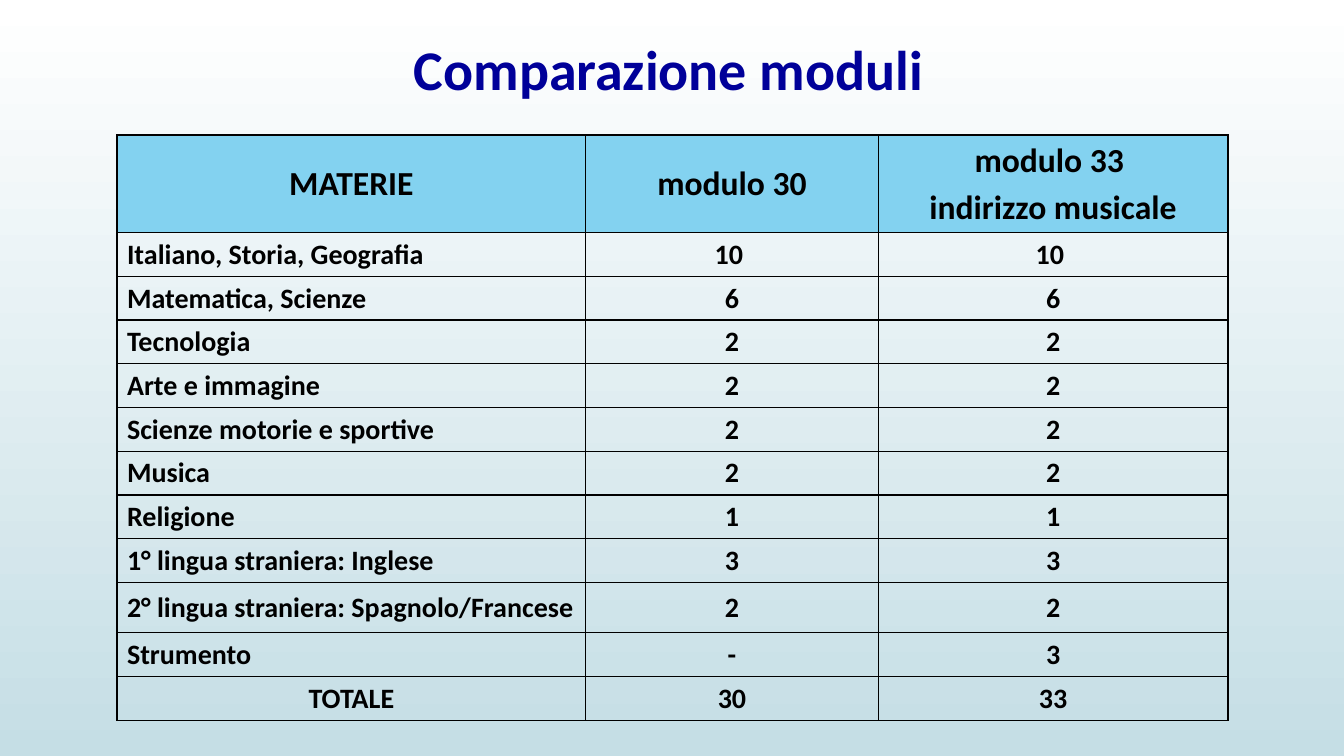
import pptx
import pptx.dml.color
import pptx.enum.text
import pptx.oxml.ns
import pptx.util
from lxml import etree
from pptx.util import Inches

RGBColor = pptx.dml.color.RGBColor
ALIGN = pptx.enum.text.PP_ALIGN
MIDDLE = pptx.enum.text.MSO_ANCHOR.MIDDLE

WHITE = RGBColor(0xFF, 0xFF, 0xFF)
PALE_TEAL = RGBColor(0xC5, 0xDE, 0xE5)
NAVY = RGBColor(0x00, 0x00, 0x99)
SKY = RGBColor(0x83, 0xD2, 0xF0)
BLACK = RGBColor(0x00, 0x00, 0x00)

COLUMN_WIDTHS = [4.65, 2.9, 3.47]
HEADER_HEIGHT, ROW_HEIGHT, TALL_ROW_HEIGHT = 0.9, 0.43, 0.5
TALL_ROW = 9

HOURS = [
    ("MATERIE", "modulo 30", "modulo 33 \nindirizzo musicale"),
    ("Italiano, Storia, Geografia", "10 ", "10 "),
    ("Matematica, Scienze", "6", "6"),
    ("Tecnologia", "2", "2"),
    ("Arte e immagine", "2", "2"),
    ("Scienze motorie e sportive", "2", "2"),
    ("Musica", "2", "2"),
    ("Religione", "1", "1"),
    ("1° lingua straniera: Inglese", "3", "3"),
    ("2° lingua straniera: Spagnolo/Francese", "2", "2"),
    ("Strumento", "-", "3"),
    ("TOTALE", "30", "33"),
]


def write_text(frame, text, size=20, color=BLACK, align=ALIGN.CENTER):
    """Fill a text frame with bold Calibri, one paragraph per line."""
    frame.word_wrap = True
    frame.text = text
    for index, paragraph in enumerate(frame.paragraphs):
        paragraph.alignment = align
        if index:
            paragraph.space_before = pptx.util.Pt(size * 0.2)
        for run in paragraph.runs:
            run.font.name = "Calibri"
            run.font.size = pptx.util.Pt(size)
            run.font.bold = True
            run.font.color.rgb = color


def set_background(slide):
    fill = slide.background.fill
    fill.gradient()
    fill.gradient_angle = 270
    for stop, color in zip(fill.gradient_stops, (WHITE, PALE_TEAL)):
        stop.color.rgb = color


def add_title(slide, text):
    box = slide.shapes.add_textbox(Inches(0.35), Inches(0.24), Inches(12.56), Inches(0.87))
    box.text_frame.vertical_anchor = MIDDLE
    write_text(box.text_frame, text, size=40, color=NAVY)


def add_borders(cell):
    properties = cell._tc.get_or_add_tcPr()
    qn = pptx.oxml.ns.qn
    for side in ("lnL", "lnR", "lnT", "lnB"):
        line = etree.SubElement(properties, qn(f"a:{side}"), w=str(pptx.util.Pt(1)))
        solid = etree.SubElement(line, qn("a:solidFill"))
        etree.SubElement(solid, qn("a:srgbClr"), val=str(BLACK))


def format_cell(cell, text, is_header, align):
    add_borders(cell)
    if is_header:
        cell.fill.solid()
        cell.fill.fore_color.rgb = SKY
    else:
        cell.fill.background()
    cell.vertical_anchor = MIDDLE
    cell.margin_left = cell.margin_right = Inches(0.1)
    cell.margin_top = cell.margin_bottom = Inches(0.05)
    write_text(cell.text_frame, text, size=24 if is_header else 20, align=align)


def add_hours_table(slide):
    last_row = len(HOURS) - 1
    heights = [ROW_HEIGHT] * len(HOURS)
    heights[0], heights[TALL_ROW] = HEADER_HEIGHT, TALL_ROW_HEIGHT
    table = slide.shapes.add_table(
        len(HOURS), len(COLUMN_WIDTHS), Inches(1.16), Inches(1.34),
        Inches(sum(COLUMN_WIDTHS)), Inches(sum(heights))).table
    table.first_row = table.horz_banding = False
    for column, width in zip(table.columns, COLUMN_WIDTHS):
        column.width = Inches(width)
    for row_index, (row, height) in enumerate(zip(table.rows, heights)):
        row.height = Inches(height)
        for column_index, text in enumerate(HOURS[row_index]):
            is_subject = column_index == 0 and 0 < row_index < last_row
            format_cell(row.cells[column_index], text, row_index == 0,
                        ALIGN.LEFT if is_subject else ALIGN.CENTER)


def main():
    presentation = pptx.Presentation()
    presentation.slide_width = Inches(13.33)
    presentation.slide_height = Inches(7.5)
    slide = presentation.slides.add_slide(presentation.slide_layouts[6])

    # Backdrop and heading
    set_background(slide)
    add_title(slide, "Comparazione moduli")

    # Weekly hours per subject
    add_hours_table(slide)

    presentation.save("out.pptx")


if __name__ == "__main__":
    main()
